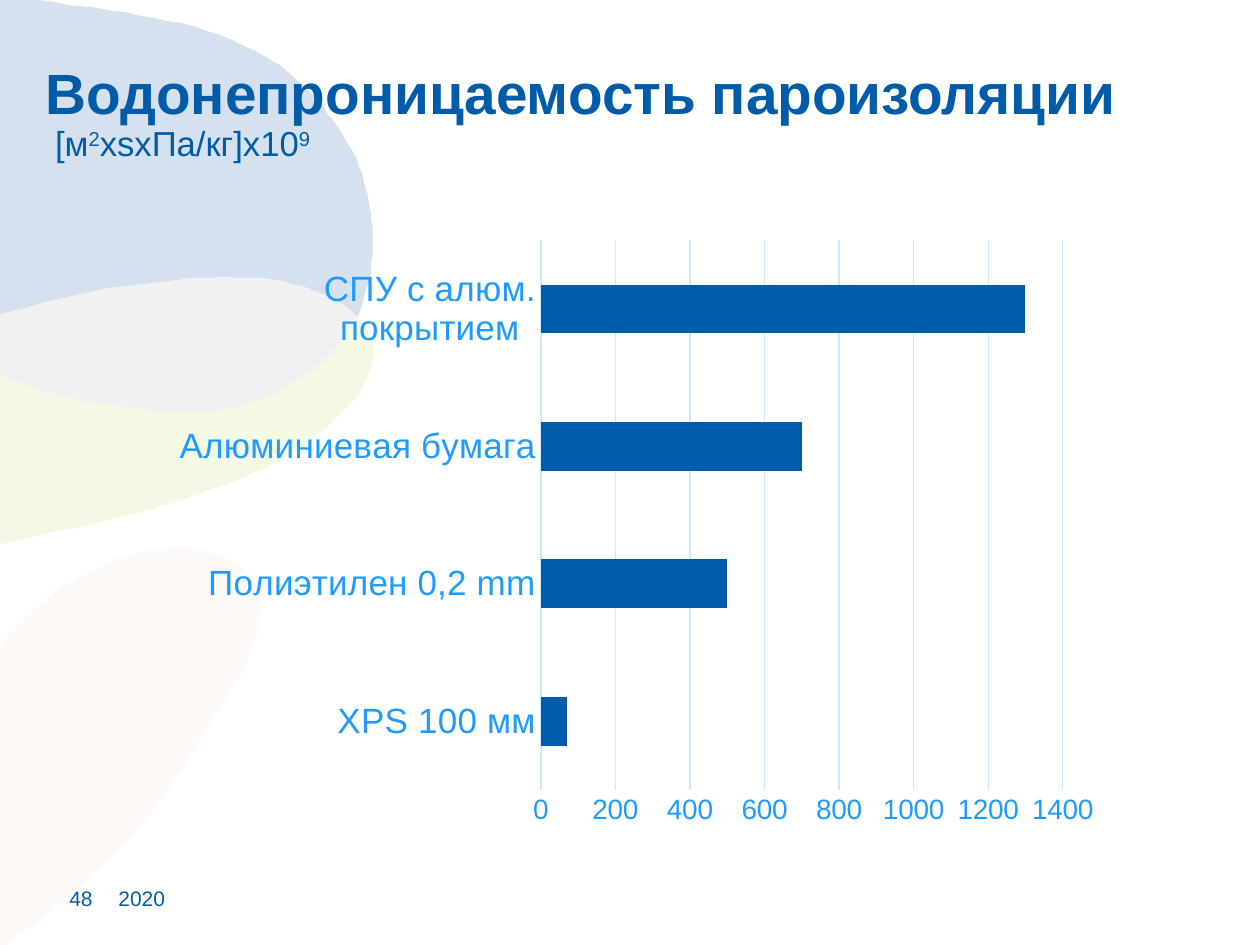
from dataclasses import dataclass

import pptx
import pptx.chart.data
import pptx.dml.color
import pptx.enum.chart
import pptx.enum.text
import pptx.util
from lxml import etree

Pt = pptx.util.Pt
Point = tuple[float, float]

COLORS = {
    "blue": "005CA8",
    "label": "219AFF",
    "grid": "CCE8FF",
    "pink": "FEF9F7",
    "green": "F3F9E3",
    "sky": "D6E1F0",
    "grey": "F1F1F1",
}
FONT = "Arial"
C_NS = "http://schemas.openxmlformats.org/drawingml/2006/chart"


@dataclass
class Petal:
    color: str
    curves: list[list[Point]]


@dataclass
class Box:
    left: float
    top: float
    width: float
    height: float


LEAF_TOP = [(0, 180), (34, 171), (68, 164), (102, 160), (128, 158.5),
            (157, 160), (179, 166), (196, 174), (204, 181)]
LEAF_BOTTOM = [(204, 181), (195, 195), (181, 210), (158, 224), (135, 233),
               (112, 236), (89, 235), (59, 231), (31, 225), (0, 215)]
SKY_EDGE = [(204, 181), (207, 174), (211.5, 156), (213, 136), (211.5, 122),
            (207, 99), (200, 84), (192, 71), (182, 58), (167, 43), (151, 32),
            (126, 20), (95, 11.5), (63, 6), (22, 0)]
GREEN_EDGE = [(0, 311), (42, 302), (79, 293), (107, 285), (139, 273),
              (161, 262), (179, 250), (194, 237), (205, 225), (211, 212),
              (213.5, 204), (213, 195), (209, 187), (204, 181)]
PINK_EDGE = [(4, 540), (17, 530), (35, 516), (64, 490), (94, 455), (117, 418),
             (130, 398), (141, 378), (147, 361), (149, 346), (147, 337),
             (141, 327), (131, 320), (119, 315), (109, 313.5), (100, 313),
             (85, 315), (68, 319), (48, 329), (32, 338), (13, 355), (0, 369)]

PETALS = [
    Petal("pink", [PINK_EDGE, [(0, 540)]]),
    Petal("green", [GREEN_EDGE, LEAF_BOTTOM]),
    Petal("sky", [LEAF_TOP, SKY_EDGE, [(0, 0)]]),
    Petal("grey", [LEAF_TOP, LEAF_BOTTOM]),
]

VALUES = {
    "XPS 100 мм": 70,
    "Полиэтилен 0,2 mm": 500,
    "Алюминиевая бумага": 700,
    "СПУ с алюм. покрытием": 1300,
}
PLOT = {"x": 0.4, "y": 0.02, "w": 0.55, "h": 0.9}


def rgb(name: str) -> pptx.dml.color.RGBColor:
    return pptx.dml.color.RGBColor.from_string(COLORS[name])


def smooth(points: list[Point], steps: int = 4) -> list[Point]:
    padded = [points[0], *points, points[-1]]
    result = [points[0]]
    for a, b, c, d in zip(padded, padded[1:], padded[2:], padded[3:]):
        for t in (i / steps for i in range(1, steps + 1)):
            result.append(tuple(
                (2 * q + (r - p) * t + (2 * p - 5 * q + 4 * r - u) * t ** 2
                 + (3 * q - p - 3 * r + u) * t ** 3) / 2
                for p, q, r, u in zip(a, b, c, d)))
    return result


def add_petal(s, petal: Petal) -> None:
    points = [pt for curve in petal.curves for pt in smooth(curve)]
    builder = s.shapes.build_freeform(*points[0], scale=Pt(1))
    builder.add_line_segments(points[1:], close=True)
    sp = builder.convert_to_shape()
    sp.shadow.inherit = False
    sp.fill.solid()
    sp.fill.fore_color.rgb = rgb(petal.color)
    sp.line.fill.background()


def style_font(font, size: float, color: str, bold: bool = False) -> None:
    font.name = FONT
    font.size = Pt(size)
    font.bold = bold
    font.color.rgb = rgb(color)


def add_text(p, text: str, *, size: float, color: str = "blue",
             bold: bool = False, baseline: int = 0) -> None:
    r = p.add_run()
    r.text = text
    style_font(r.font, size, color, bold)
    if baseline:
        r._r.get_or_add_rPr().set("baseline", str(baseline * 1000))


def add_box(s, box: Box, anchor):
    sp = s.shapes.add_textbox(Pt(box.left), Pt(box.top), Pt(box.width), Pt(box.height))
    tf = sp.text_frame
    tf.word_wrap = True
    tf.vertical_anchor = anchor
    tf.margin_left = tf.margin_right = tf.margin_top = tf.margin_bottom = 0
    return tf.paragraphs[0]


def set_plot_layout(chart) -> None:
    area = chart._chartSpace.chart.plotArea
    for old in area.findall(f"{{{C_NS}}}layout"):
        area.remove(old)
    layout = etree.Element(f"{{{C_NS}}}layout")
    manual = etree.SubElement(layout, f"{{{C_NS}}}manualLayout")
    settings = {"layoutTarget": "inner", "xMode": "edge", "yMode": "edge", **PLOT}
    for tag, value in settings.items():
        etree.SubElement(manual, f"{{{C_NS}}}{tag}").set("val", str(value))
    area.insert(0, layout)


def style_axis(axis, size: float) -> None:
    style_font(axis.tick_labels.font, size, "label")
    axis.major_tick_mark = pptx.enum.chart.XL_TICK_MARK.NONE
    axis.minor_tick_mark = pptx.enum.chart.XL_TICK_MARK.NONE


def style_line(line) -> None:
    line.color.rgb = rgb("grid")
    line.width = Pt(0.75)


def add_bar_chart(s, box: Box) -> None:
    data = pptx.chart.data.CategoryChartData()
    data.categories = list(VALUES)
    data.add_series("Series 1", list(VALUES.values()))
    chart = s.shapes.add_chart(
        pptx.enum.chart.XL_CHART_TYPE.BAR_CLUSTERED,
        Pt(box.left), Pt(box.top), Pt(box.width), Pt(box.height), data).chart
    chart.has_legend = False
    chart.has_title = False
    style_font(chart.font, 10, "blue")
    plot = chart.plots[0]
    plot.gap_width = 182
    plot.vary_by_categories = False
    fill = plot.series[0].format.fill
    fill.solid()
    fill.fore_color.rgb = rgb("blue")
    style_axis(chart.category_axis, 20)
    style_line(chart.category_axis.format.line)
    axis = chart.value_axis
    style_axis(axis, 16)
    axis.minimum_scale, axis.maximum_scale, axis.major_unit = 0, 1400, 200
    axis.has_major_gridlines = True
    style_line(axis.major_gridlines.format.line)
    axis.format.line.fill.background()
    set_plot_layout(chart)


def main() -> None:
    prs = pptx.Presentation()
    prs.slide_width, prs.slide_height = Pt(720), Pt(540)
    s = prs.slides.add_slide(prs.slide_layouts[6])
    for petal in PETALS:
        add_petal(s, petal)

    anchors = pptx.enum.text.MSO_ANCHOR
    for text, left, width in (("2020", 67.7, 50), ("48", 39.6, 28)):
        add_text(add_box(s, Box(left, 509, width, 11.5), anchors.BOTTOM), text, size=12)

    add_bar_chart(s, Box(92.2, 130.3, 542.2, 349.2))

    p = add_box(s, Box(26, 37.4, 658, 89.3), anchors.TOP)
    p.line_spacing = 0.9
    add_text(p, "Водонепроницаемость пароизоляции", size=32.4, bold=True)
    p.add_line_break()
    for text, baseline in ((" [м", 0), ("2", 30), ("xsxПа/кг]x10", 0), ("9", 30)):
        add_text(p, text, size=19.8, baseline=baseline)

    prs.save("out.pptx")


if __name__ == "__main__":
    main()
